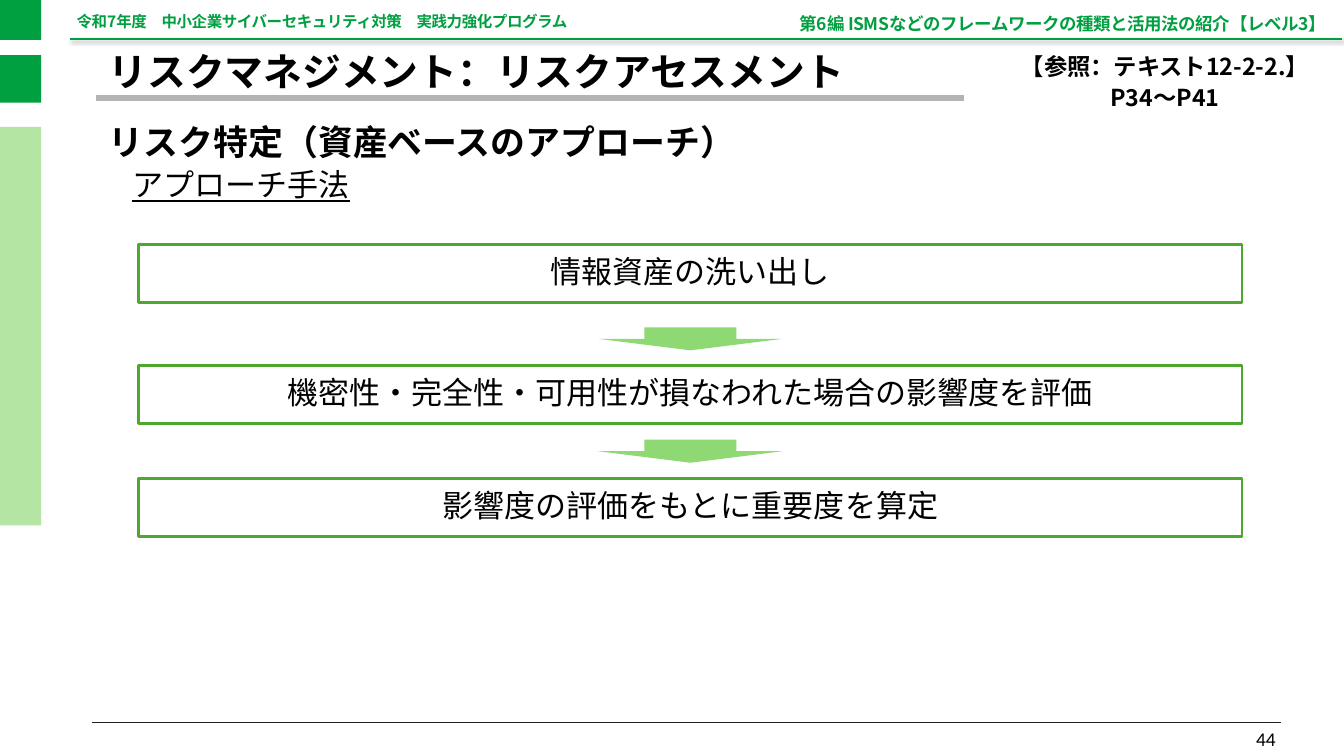
from dataclasses import dataclass
from typing import NamedTuple

from lxml import etree
from pptx import Presentation
from pptx import util as u
from pptx.dml.color import RGBColor
from pptx.enum import shapes, text
from pptx.oxml import ns


@dataclass(frozen=True)
class Theme:
    font: str = "Noto Sans CJK JP"
    number_font: str = "Calibri"
    ink: str = "000000"
    brand: str = "009F40"
    pale: str = "B4E5A2"
    arrow: str = "8ED973"
    border: str = "4EA72E"
    title_rule: str = "B2B3B5"
    footer_rule: str = "222222"
    title: int = 40
    subtitle: int = 36
    body: int = 32
    reference: int = 24
    number: int = 20
    chapter: int = 18
    programme: int = 16


class Box(NamedTuple):
    """A region in centimetres."""
    x: float
    y: float
    w: float
    h: float

    def inner(self, dx, dy, w, h):
        return Box(self.x + dx, self.y + dy, w, h)

    def emu(self):
        return [u.Cm(v) for v in self]


T = Theme()
LEFT, CENTER, RIGHT = text.PP_ALIGN.LEFT, text.PP_ALIGN.CENTER, text.PP_ALIGN.RIGHT
TOP, MIDDLE, BOTTOM = text.MSO_ANCHOR.TOP, text.MSO_ANCHOR.MIDDLE, text.MSO_ANCHOR.BOTTOM


def write(sp, words, size, color=T.ink, font=T.font, bold=False, underline=False,
          align=LEFT, anchor=MIDDLE, spacing=0.9, before=0, tight=False):
    """Fill a shape with one paragraph; tight drops the margins and narrows the tracking."""
    tf = sp.text_frame
    tf.word_wrap = True
    tf.vertical_anchor = anchor
    if tight:
        tf.margin_left = tf.margin_right = tf.margin_bottom = 0
        tf.margin_top = u.Cm(0.03)
    p = tf.paragraphs[0]
    p.alignment, p.line_spacing, p.space_before = align, spacing, u.Pt(before)
    p.add_run().text = words
    f = p.font
    f.name, f.size, f.bold, f.underline = font, u.Pt(size), bold, underline
    f.color.rgb = RGBColor.from_string(color)
    props = p._p.pPr.find(ns.qn("a:defRPr"))
    etree.SubElement(props, ns.qn("a:ea"), typeface=font)
    if tight:
        props.set("spc", "-40")


def label(s, box, words, size, **style):
    write(s.shapes.add_textbox(*box.emu()), words, size, **style)


def block(s, kind, box, fill=None, line=None):
    sp = s.shapes.add_shape(kind, *box.emu())
    sp.shadow.inherit = False
    if fill:
        sp.fill.solid()
        sp.fill.fore_color.rgb = RGBColor.from_string(fill)
    else:
        sp.fill.background()
    if line:
        sp.line.color.rgb = RGBColor.from_string(line)
        sp.line.width = u.Pt(3)
    else:
        sp.line.fill.background()
    return sp


def rule(s, x, y, w, color, width, shadow=False):
    """Draw a horizontal line."""
    c = s.shapes.add_connector(shapes.MSO_CONNECTOR.STRAIGHT,
                               u.Cm(x), u.Cm(y), u.Cm(x + w), u.Cm(y))
    c.line.color.rgb = RGBColor.from_string(color)
    c.line.width = u.Pt(width)
    effects = etree.SubElement(c._element.spPr, ns.qn("a:effectLst"))
    if shadow:
        outer = etree.SubElement(effects, ns.qn("a:outerShdw"), blurRad=str(u.Pt(4)),
                                 dist=str(u.Pt(3)), dir="2700000", rotWithShape="0")
        black = etree.SubElement(outer, ns.qn("a:srgbClr"), val="000000")
        etree.SubElement(black, ns.qn("a:alpha"), val="40000")


def sidebar(s, box):
    for dy, h, color in ((0, 1.45, T.brand), (2.01, 1.73, T.brand), (4.62, 14.5, T.pale)):
        block(s, shapes.MSO_SHAPE.RECTANGLE, box.inner(0, dy, box.w, h), fill=color)


def header(s, box):
    rule(s, box.x, box.y + box.h, box.w, T.brand, 2, shadow=True)
    label(s, box.inner(0.25, 0.56, 18.9, 0.56), "令和7年度　中小企業サイバーセキュリティ対策　実践力強化プログラム",
          T.programme, color=T.brand, bold=True, anchor=TOP, spacing=u.Pt(15), tight=True)
    label(s, box.inner(19.35, 0.51, 26.39, 0.74),
          "第6編 ISMSなどのフレームワークの種類と活用法の紹介【レベル3】",
          T.chapter, color=T.brand, bold=True, align=RIGHT, tight=True)


def headings(s, box):
    rule(s, box.x, box.y + 1.9, 31.57, T.title_rule, 6)
    label(s, box.inner(0.2, 0.25, 32, 1.55), "リスクマネジメント：リスクアセスメント",
          T.title, bold=True, before=10)
    label(s, box.inner(0.2, 2.79, 41.5, 1.55), "リスク特定（資産ベースのアプローチ）",
          T.subtitle, bold=True, before=10)
    label(s, box.inner(1.06, 4.37, 42.93, 1.5), "アプローチ手法",
          T.body, underline=True, anchor=TOP)
    label(s, box.inner(32.89, 0, 12.01, 2.36), "【参照：テキスト12-2-2.】P34～P41",
          T.reference, bold=True, align=CENTER, anchor=TOP, spacing=1.1)


def flow(s, box):
    """Stack the steps, with a centred arrow above each later one."""
    step_h, arrow_w, arrow_h = 2.11, 6.71, 0.84
    steps = (("情報資産の洗い出し", 0, None),
             ("機密性・完全性・可用性が損なわれた場合の影響度を評価", 4.42, 3.02),
             ("影響度の評価をもとに重要度を算定", 8.53, 7.11))
    for words, dy, arrow_dy in steps:
        sp = block(s, shapes.MSO_SHAPE.RECTANGLE, box.inner(0, dy, box.w, step_h), line=T.border)
        write(sp, words, T.body, align=CENTER)
        if arrow_dy is not None:
            block(s, shapes.MSO_SHAPE.DOWN_ARROW,
                  box.inner((box.w - arrow_w) / 2, arrow_dy, arrow_w, arrow_h), fill=T.arrow)


def footer(s, box):
    rule(s, box.x, box.y + 0.33, box.w, T.footer_rule, 1)
    label(s, box.inner(box.w - 10.94, 0, 11, box.h), "44", T.number,
          font=T.number_font, align=RIGHT, anchor=BOTTOM, spacing=1.0)


def main():
    prs = Presentation()
    prs.slide_width, prs.slide_height = u.Cm(48.92), u.Cm(27.51)
    s = prs.slides.add_slide(prs.slide_layouts[6])
    sidebar(s, Box(0, 0, 1.5, 19.12))
    header(s, Box(2.54, 0, 46.3, 1.42))
    headings(s, Box(3.51, 1.68, 44.9, 5.87))
    flow(s, Box(5.05, 8.89, 40.16, 10.64))
    footer(s, Box(3.35, 25.96, 43.28, 1.47))
    prs.save("out.pptx")


if __name__ == "__main__":
    main()
